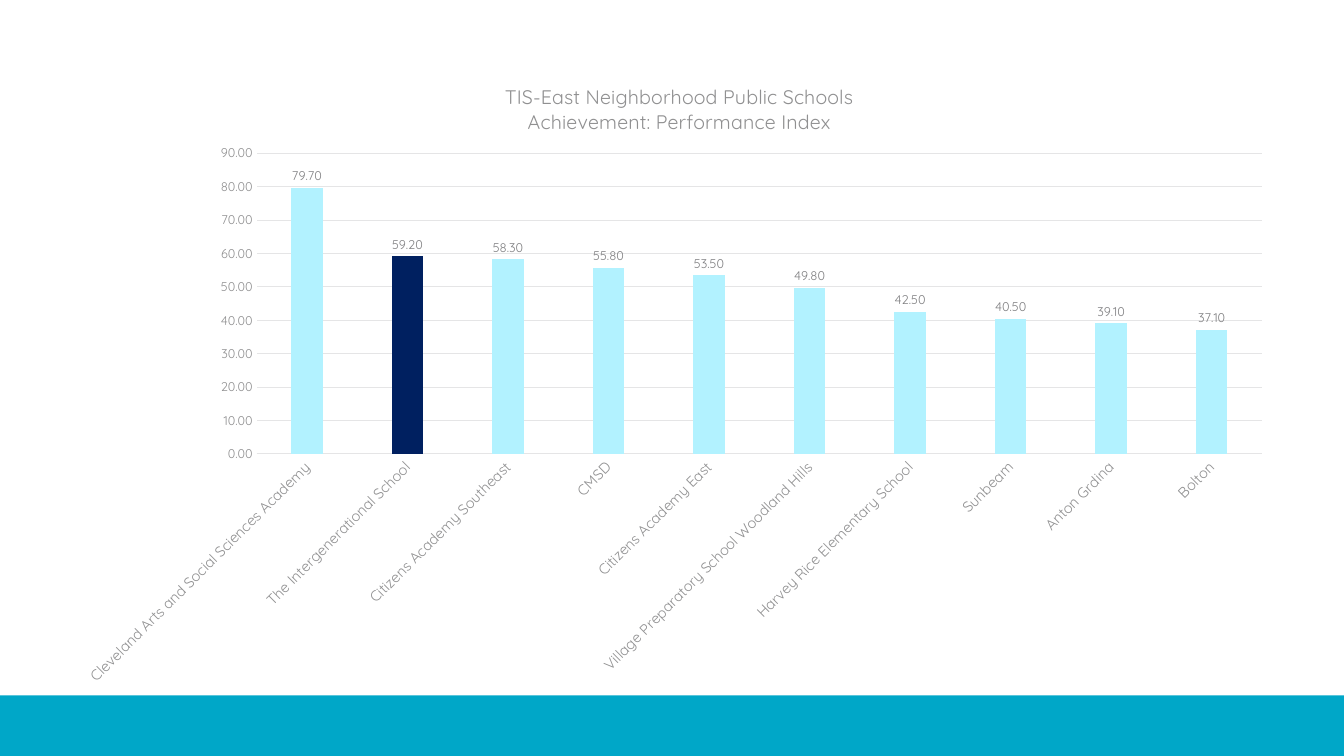
from pptx import Presentation
from pptx.chart import data
from pptx.dml.color import RGBColor
from pptx.enum import chart as kinds, shapes
from pptx.oxml import parse_xml
from pptx.oxml.ns import nsdecls, qn
from pptx.util import Inches, Pt

WHITE = RGBColor(0xFF, 0xFF, 0xFF)
TEAL = RGBColor(0x00, 0xA7, 0xC8)
PALE_BLUE = RGBColor(0xB2, 0xF2, 0xFF)
NAVY = RGBColor(0x00, 0x20, 0x60)
GRID_GRAY = RGBColor(0xE5, 0xE5, 0xE6)
TEXT_GRAY = RGBColor(0x90, 0x90, 0x91)
LABEL_GRAY = RGBColor(0x7F, 0x7F, 0x81)
DARK_GRAY = RGBColor(0x55, 0x55, 0x56)
FONT = "Quicksand"

TITLE = ["TIS-East Neighborhood Public Schools", "Achievement: Performance Index"]
HIGHLIGHTED = "The Intergenerational School"
SCORES = {
    "Cleveland Arts and Social Sciences Academy": 79.7,
    HIGHLIGHTED: 59.2,
    "Citizens Academy Southeast": 58.3,
    "CMSD": 55.8,
    "Citizens Academy East": 53.5,
    "Village Preparatory School Woodland Hills": 49.8,
    "Harvey Rice Elementary School": 42.5,
    "Sunbeam": 40.5,
    "Anton Grdina": 39.1,
    "Bolton": 37.1,
}


def set_font(font, size, color):
    font.name, font.size, font.bold = FONT, Pt(size), False
    font.color.rgb = color


def manual_layout(target="", **fractions):
    """Return a c:layout that places a chart part by fractions of the chart."""
    modes = "".join(f'<c:{key}Mode val="edge"/>' for key in "xy")
    values = "".join(f'<c:{key} val="{value}"/>' for key, value in fractions.items())
    return parse_xml(f'<c:layout {nsdecls("c")}><c:manualLayout>{target}{modes}{values}'
                     "</c:manualLayout></c:layout>")


deck = Presentation()
deck.slide_width, deck.slide_height = Inches(13.33), Inches(7.5)
page = deck.slides.add_slide(deck.slide_layouts[6])
page.background.fill.solid()
page.background.fill.fore_color.rgb = WHITE

footer = page.shapes.add_shape(shapes.MSO_SHAPE.RECTANGLE, 0, Inches(6.9), Inches(13.33), Inches(0.6))
footer.shadow.inherit = False
footer.fill.solid()
footer.fill.fore_color.rgb = TEAL
footer.line.fill.background()

# Chart and title
chart_data = data.CategoryChartData(number_format="0.00")
chart_data.categories = list(SCORES)
chart_data.add_series("Series 1", list(SCORES.values()))
chart = page.shapes.add_chart(
    kinds.XL_CHART_TYPE.COLUMN_CLUSTERED,
    Inches(0.6), Inches(0.53), Inches(12.16), Inches(6.39), chart_data).chart
chart.has_legend = False
set_font(chart.font, 10, DARK_GRAY)

title_frame = chart.chart_title.text_frame
for index, line in enumerate(TITLE):
    para = title_frame.add_paragraph() if index else title_frame.paragraphs[0]
    span = para.add_run()
    span.text = line
    set_font(span.font, 14, TEXT_GRAY)
title_element = chart.chart_title._element
for layout in title_element.findall(qn("c:layout")):
    title_element.remove(layout)
title_element.find(qn("c:tx")).addnext(manual_layout(x=0.36, y=0.04))

plot_area = chart._chartSpace.chart.plotArea
for layout in plot_area.findall(qn("c:layout")):
    plot_area.remove(layout)
plot_area.insert(0, manual_layout('<c:layoutTarget val="inner"/>', x=0.16, y=0.155, w=0.82, h=0.467))

# Axes
schools, index_axis = chart.category_axis, chart.value_axis
for axis, size in ((schools, 10.5), (index_axis, 9)):
    axis.major_tick_mark = axis.minor_tick_mark = kinds.XL_TICK_MARK.NONE
    set_font(axis.tick_labels.font, size, TEXT_GRAY)
schools._element.txPr.bodyPr.set("rot", "-2700000")
index_axis.minimum_scale, index_axis.maximum_scale, index_axis.major_unit = 0, 90, 10
index_axis.tick_labels.number_format = "0.00"
index_axis.tick_labels.number_format_is_linked = False
index_axis.format.line.fill.background()
for line in (schools.format.line, index_axis.major_gridlines.format.line):
    line.color.rgb = GRID_GRAY
    line.width = Pt(0.75)

# Columns and values
plot = chart.plots[0]
plot.gap_width, plot.overlap, plot.vary_by_categories = 219, -27, False
columns = plot.series[0]
highlight = columns.points[list(SCORES).index(HIGHLIGHTED)]
for column, color in ((columns, PALE_BLUE), (highlight, NAVY)):
    column.format.fill.solid()
    column.format.fill.fore_color.rgb = color
labels = columns.data_labels
labels.show_value = True
labels.position = kinds.XL_LABEL_POSITION.OUTSIDE_END
labels.number_format, labels.number_format_is_linked = "0.00", False
set_font(labels.font, 9, LABEL_GRAY)

deck.save("out.pptx")
